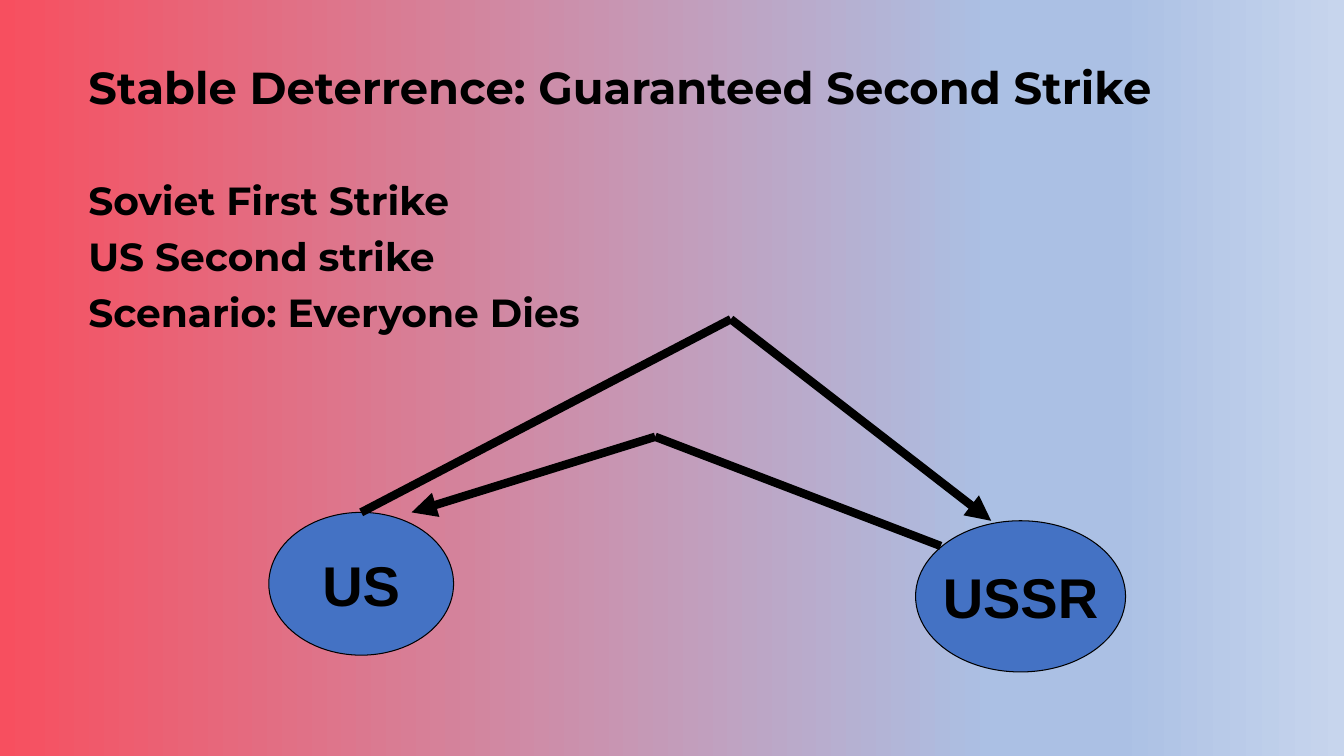
from lxml import etree
from pptx import Presentation
from pptx.dml.color import RGBColor
from pptx.enum.shapes import MSO_CONNECTOR, MSO_SHAPE
from pptx.enum.text import MSO_ANCHOR as ANCHOR, PP_ALIGN as ALIGN
from pptx.oxml.ns import qn
from pptx.util import Pt

BLACK, BLUE = "000000", "4472C4"
BACKGROUND = [(0, "F74F5F"), (74, "ABC0E4"), (83, "ABC0E4"), (100, "C7D5ED")]


def rgb(value):
    return RGBColor.from_string(value)


def add_run(p, text, size, font):
    r = p.add_run()
    r.text = text
    r.font.size, r.font.name, r.font.bold = Pt(size), font, True
    r.font.color.rgb = rgb(BLACK)


def paint_background(s):
    fill = s.background.fill
    fill.gradient()
    fill.gradient_angle = 0
    stops = next(s.element.iter(qn("a:gsLst")))
    for stop in list(stops):
        stops.remove(stop)
    for percent, color in BACKGROUND:
        stop = etree.SubElement(stops, qn("a:gs"), pos=str(percent * 1000))
        etree.SubElement(stop, qn("a:srgbClr"), val=color)


def add_title(s, text, x, y, w, h):
    sp = s.shapes.title
    sp.left, sp.top, sp.width, sp.height = Pt(x), Pt(y), Pt(w), Pt(h)
    tf = sp.text_frame
    tf.vertical_anchor = ANCHOR.MIDDLE
    p = tf.paragraphs[0]
    p.alignment, p.line_spacing = ALIGN.LEFT, 0.9
    add_run(p, text, 32, "Montserrat")


def add_scenario(s, lines, x, y, w, h):
    tf = s.shapes.add_textbox(Pt(x), Pt(y), Pt(w), Pt(h)).text_frame
    tf.word_wrap = True
    for i, line in enumerate(lines):
        p = tf.add_paragraph() if i else tf.paragraphs[0]
        p.line_spacing, p.space_before = 0.9, Pt(10)
        add_run(p, line, 28, "Montserrat")


def add_country(s, name, x, y, w, h):
    sp = s.shapes.add_shape(MSO_SHAPE.OVAL, Pt(x), Pt(y), Pt(w), Pt(h))
    sp.shadow.inherit = False
    sp.fill.solid()
    sp.fill.fore_color.rgb = rgb(BLUE)
    sp.line.color.rgb = rgb(BLACK)
    sp.line.width = Pt(0.75)
    tf = sp.text_frame
    tf.word_wrap = False
    tf.vertical_anchor = ANCHOR.MIDDLE
    p = tf.paragraphs[0]
    p.alignment = ALIGN.CENTER
    add_run(p, name, 40, "Arial")


def add_strike(s, launch, peak, target):
    """Two straight legs, with an arrowhead on the second."""
    for start, end in ((launch, peak), (peak, target)):
        leg = s.shapes.add_connector(
            MSO_CONNECTOR.STRAIGHT, *(Pt(v) for v in start + end))
        leg.line.color.rgb = rgb(BLACK)
        leg.line.width = Pt(6)
        props = leg.element.spPr
        if end == target:
            etree.SubElement(props.find(qn("a:ln")), qn("a:tailEnd"), type="triangle")
        etree.SubElement(props, qn("a:effectLst"))


def add_strike_diagram(s, x, y):
    # Countries
    add_country(s, "US", x, y + 138, 132, 102)
    add_country(s, "USSR", x + 462, y + 144, 150, 108)
    # Soviet strike, then US strike
    add_strike(s, (x + 480, y + 162), (x + 276, y + 84), (x + 102, y + 138))
    add_strike(s, (x + 66, y + 138), (x + 330, y), (x + 516, y + 144))


def main():
    prs = Presentation()
    prs.slide_width, prs.slide_height = Pt(960), Pt(540)
    s = prs.slides.add_slide(prs.slide_layouts[5])
    paint_background(s)
    add_title(s, "Stable Deterrence: Guaranteed Second Strike", 56, 24, 824, 81)
    add_scenario(s, ["Soviet First Strike", "US Second strike",
                     "Scenario: Everyone Dies"], 56, 126, 747, 353)
    add_strike_diagram(s, 192, 228)
    prs.save("out.pptx")


if __name__ == "__main__":
    main()
